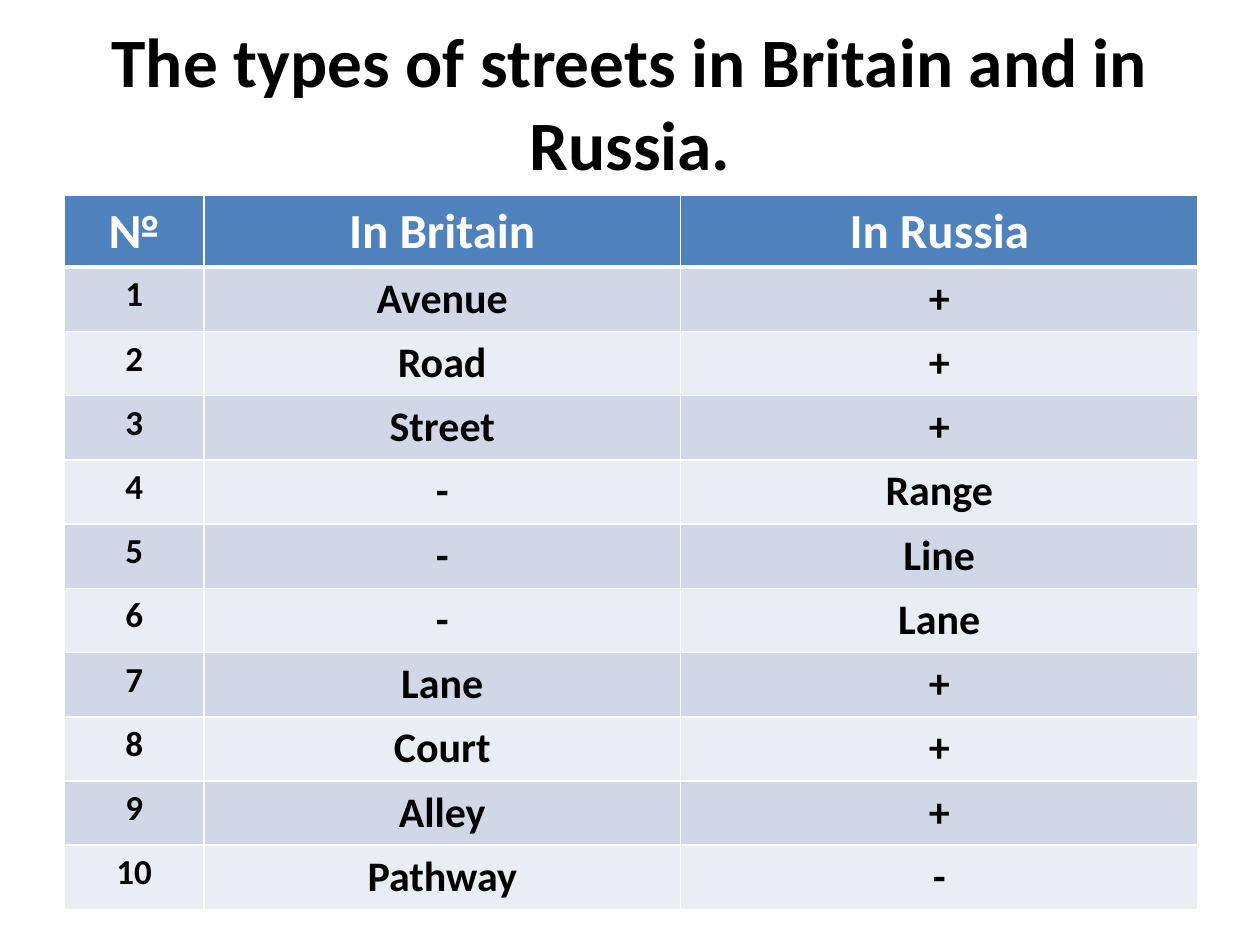
"""Build a slide with a table of street types in Britain and in Russia."""
from lxml import etree
from pptx import Presentation
from pptx.dml.color import RGBColor
from pptx.enum.text import MSO_ANCHOR, PP_ALIGN
from pptx.oxml.ns import qn
from pptx.util import Inches, Pt

CENTER = PP_ALIGN.CENTER
MIDDLE = MSO_ANCHOR.MIDDLE
BLACK = RGBColor(0x00, 0x00, 0x00)
WHITE = RGBColor(0xFF, 0xFF, 0xFF)
BLUE = RGBColor(0x4F, 0x81, 0xBD)
BANDS = [RGBColor(0xE9, 0xED, 0xF4), RGBColor(0xD0, 0xD8, 0xE8)]

HEAD = ["№", "In Britain", "In Russia"]
STREETS = [
    ("Avenue", "+"),
    ("Road", "+"),
    ("Street", "+"),
    ("-", "Range"),
    ("-", "Line"),
    ("-", "Lane"),
    ("Lane", "+"),
    ("Court", "+"),
    ("Alley", "+"),
    ("Pathway", "-"),
]
ROWS = [HEAD] + [(str(n), *pair) for n, pair in enumerate(STREETS, 1)]
WIDTHS = [1.11, 3.78, 4.11]
HEAD_HIGH, ROW_HIGH = 0.57, 0.51


def write(frame, text, size, color):
    para = frame.paragraphs[0]
    para.alignment = CENTER
    run = para.add_run()
    run.text = text
    style = {"name": "Calibri", "size": Pt(size), "bold": True}
    for key, value in style.items():
        setattr(run.font, key, value)
    run.font.color.rgb = color


def edge(cell, side, width):
    props = cell._tc.get_or_add_tcPr()
    line = etree.SubElement(props, qn(f"a:ln{side}"), w=str(Pt(width)))
    fill = etree.SubElement(line, qn("a:solidFill"))
    etree.SubElement(fill, qn("a:srgbClr"), val=str(WHITE))


deck = Presentation()
deck.slide_width, deck.slide_height = Inches(10), Inches(7.5)
slide = deck.slides.add_slide(deck.slide_layouts[6])

title = slide.shapes.add_textbox(Inches(0.5), Inches(0.3), Inches(9), Inches(1.01))
title.text_frame.word_wrap = True
title.text_frame.vertical_anchor = MIDDLE
write(title.text_frame, "The types of streets in Britain and in Russia.", 39.6, BLACK)

high = HEAD_HIGH + ROW_HIGH * len(STREETS)
table = slide.shapes.add_table(
    len(ROWS), len(HEAD), Inches(0.51), Inches(1.55), Inches(sum(WIDTHS)), Inches(high)
).table
for column, width in zip(table.columns, WIDTHS):
    column.width = Inches(width)

for r, texts in enumerate(ROWS):
    table.rows[r].height = Inches(ROW_HIGH if r else HEAD_HIGH)
    for c, text in enumerate(texts):
        cell = table.cell(r, c)
        edges = {"L": 1, "R": 1, "T": 3 if r == 1 else 1, "B": 1 if r else 3}
        for side, width in edges.items():
            edge(cell, side, width)
        cell.fill.solid()
        cell.fill.fore_color.rgb = BANDS[r % 2] if r else BLUE
        size = 28 if r == 0 else 24 if c else 20
        write(cell.text_frame, text, size, BLACK if r else WHITE)

deck.save("out.pptx")
